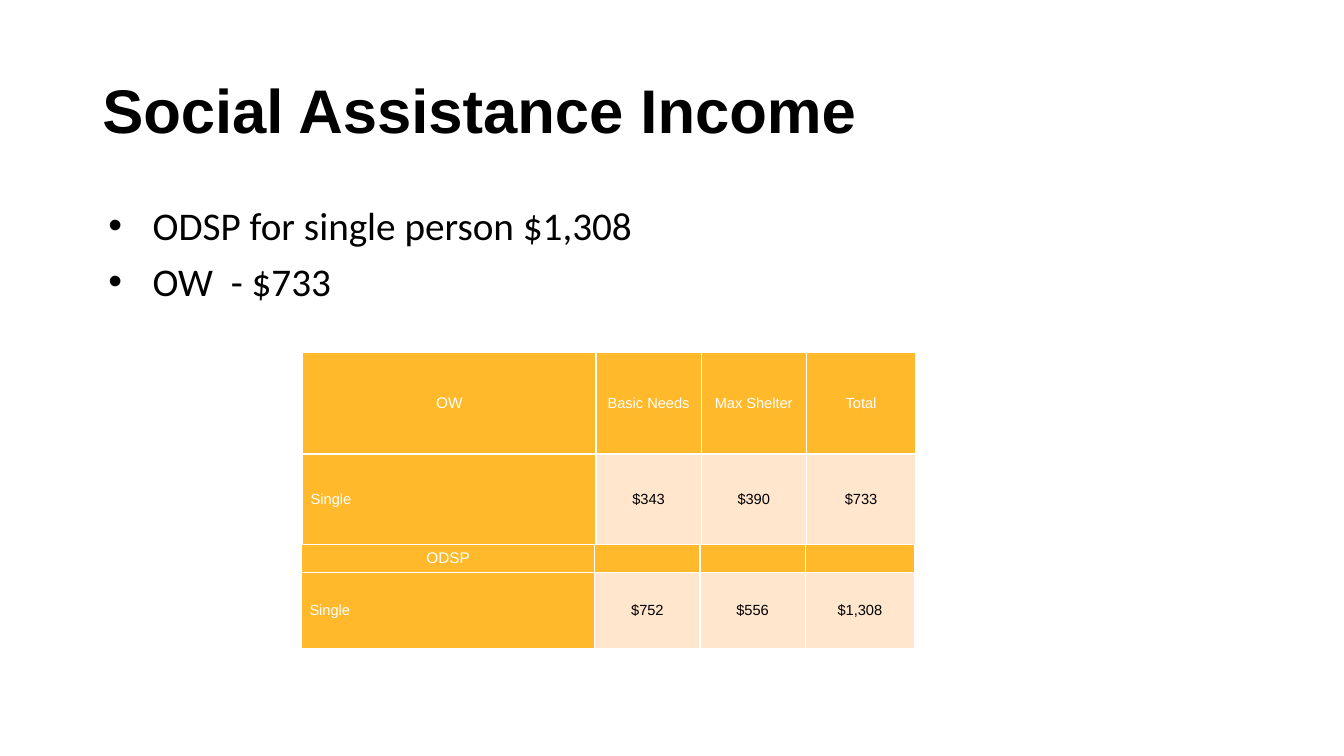
from lxml import etree
from pptx import Presentation
from pptx import util as u
from pptx.dml.color import RGBColor
from pptx.enum import text
from pptx.oxml.ns import qn

COLORS = {"ink": "000000", "white": "FFFFFF", "amber": "FFB92A", "peach": "FFE6CD"}


def write(paragraph, content, size, color, **formats):
    """Set paragraph formats, then add one run with its font."""
    for name, value in formats.items():
        setattr(paragraph, name, value)
    run = paragraph.add_run()
    run.text = content
    run.font.size = u.Pt(size)
    run.font.color.rgb = RGBColor.from_string(COLORS[color])
    return run.font


def add_white_borders(cell):
    properties = cell._tc.get_or_add_tcPr()
    for side in ("lnL", "lnR", "lnT", "lnB"):
        line = etree.SubElement(properties, qn(f"a:{side}"), w=str(u.Pt(1)))
        fill = etree.SubElement(line, qn("a:solidFill"))
        etree.SubElement(fill, qn("a:srgbClr"), val=COLORS["white"])


presentation = Presentation()
presentation.slide_width = u.Cm(33.87)
presentation.slide_height = u.Cm(19.05)
slide = presentation.slides.add_slide(presentation.slide_layouts[6])

# Title and bullets
frames = []
for top, height, anchor in (
    (1.01, 3.68, text.MSO_ANCHOR.MIDDLE),
    (5.07, 12.09, text.MSO_ANCHOR.TOP),
):
    box = slide.shapes.add_textbox(u.Cm(2.33), u.Cm(top), u.Cm(29.21), u.Cm(height))
    box.text_frame.word_wrap = True
    box.text_frame.vertical_anchor = anchor
    frames.append(box.text_frame)
title_frame, bullet_frame = frames

font = write(title_frame.paragraphs[0], "Social Assistance Income", 44, "ink", line_spacing=0.9)
font.name = "Arial"
font.bold = True

for index, content in enumerate(("ODSP for single person $1,308", "OW  - $733")):
    paragraph = bullet_frame.add_paragraph() if index else bullet_frame.paragraphs[0]
    properties = paragraph._p.get_or_add_pPr()
    properties.set("marL", str(u.Cm(1.27)))
    properties.set("indent", str(u.Cm(-1.12)))
    etree.SubElement(properties, qn("a:buFont"), typeface="Arial")
    etree.SubElement(properties, qn("a:buChar"), char="•")
    spacing = {"space_before": u.Pt(10)} if index else {}
    write(paragraph, content, 28, "ink", line_spacing=0.9, **spacing).name = "Calibri"

# Income tables: left, top, row heights, header size, rows
column_widths = (7.39, 2.65, 2.65, 2.76)
income_tables = (
    (7.63, 8.89, (2.55, 2.29),
     (("OW", "Basic Needs", "Max Shelter", "Total"), ("Single", "$343", "$390", "$733"))),
    (7.6, 13.72, (0.71, 1.92),
     (("ODSP", "", "", ""), ("Single", "$752", "$556", "$1,308"))),
)
cell_formats = {
    "margin_left": u.Cm(0.05),
    "margin_right": u.Cm(0.05),
    "margin_top": 0,
    "margin_bottom": 0,
    "vertical_anchor": text.MSO_ANCHOR.MIDDLE,
}

for left, top, row_heights, rows in income_tables:
    table = slide.shapes.add_table(
        len(rows), len(column_widths), u.Cm(left), u.Cm(top),
        u.Cm(sum(column_widths)), u.Cm(sum(row_heights)),
    ).table
    table.first_row = False
    table.horz_banding = False
    for column, width in zip(table.columns, column_widths):
        column.width = u.Cm(width)
    for row_index, (height, contents) in enumerate(zip(row_heights, rows)):
        table.rows[row_index].height = u.Cm(height)
        for column_index, content in enumerate(contents):
            cell = table.cell(row_index, column_index)
            for name, value in cell_formats.items():
                setattr(cell, name, value)
            is_amount = row_index > 0 and column_index > 0
            is_row_label = row_index > 0 and column_index == 0
            add_white_borders(cell)
            cell.fill.solid()
            cell.fill.fore_color.rgb = RGBColor.from_string(
                COLORS["peach" if is_amount else "amber"])

            paragraph = cell.text_frame.paragraphs[0]
            if not content:
                etree.SubElement(paragraph._p, qn("a:endParaRPr"), sz="1100")
                continue
            if is_row_label:
                paragraph._p.get_or_add_pPr().set("marL", str(u.Cm(0.15)))
            write(
                paragraph, content,
                11 if row_index == column_index == 0 else 10.5,
                "ink" if is_amount else "white",
                alignment=text.PP_ALIGN.LEFT if is_row_label else text.PP_ALIGN.CENTER,
            ).name = "Arial"

presentation.save("out.pptx")
